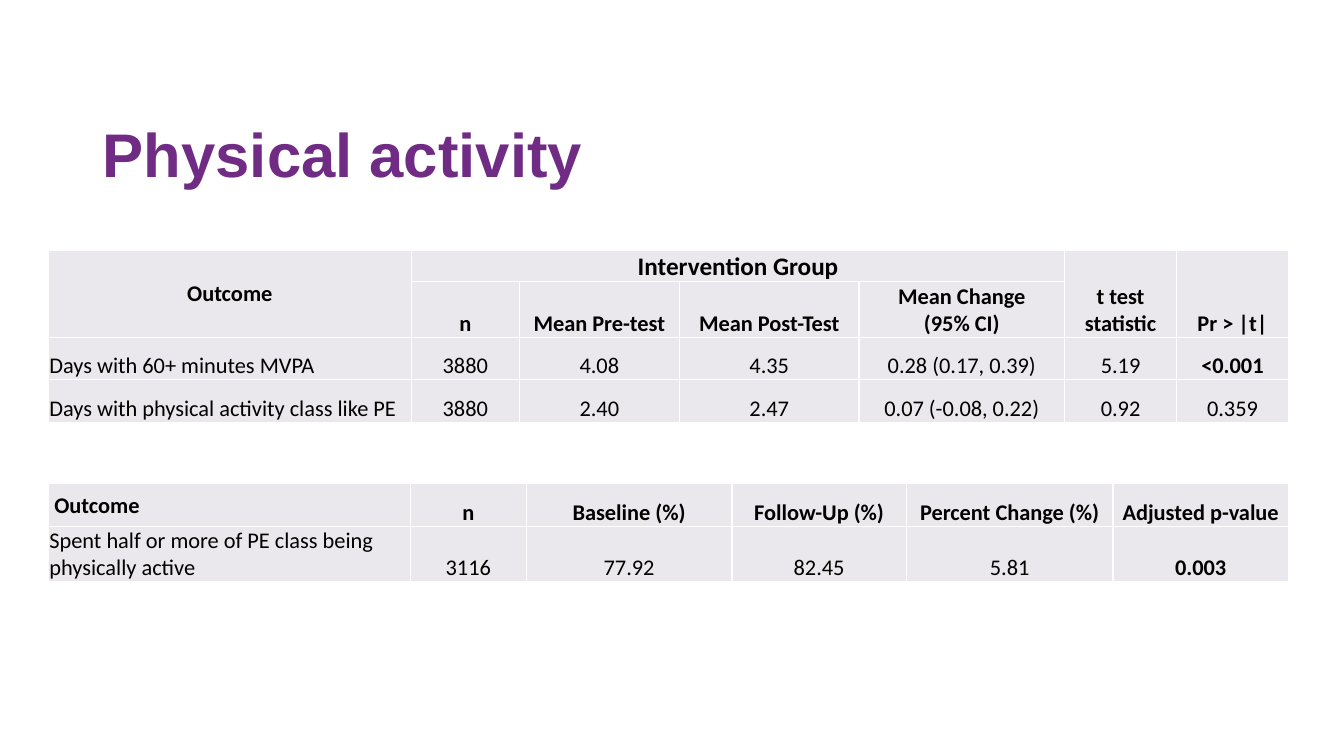
import dataclasses

import lxml.etree
import pptx
import pptx.dml.color
import pptx.enum.text
import pptx.oxml.ns
import pptx.util

Inches = pptx.util.Inches
Pt = pptx.util.Pt
Align = pptx.enum.text.PP_ALIGN
Anchor = pptx.enum.text.MSO_ANCHOR


@dataclasses.dataclass(frozen=True)
class Theme:
    """Colours, fonts and type sizes of the slide."""
    title_colour: str = "702B84"
    text_colour: str = "000000"
    cell_fill: str = "EBE8ED"
    border: str = "FFFFFF"
    title_font: str = "Arial"
    table_font: str = "Calibri"
    title_size: int = 44
    group_size: int = 18
    body_size: int = 16


THEME = Theme()
TABLES_LEFT = 0.48

MEANS_COLUMNS = [3.6, 1.07, 1.59, 1.78, 2.04, 1.11, 1.11]
MEANS_HEIGHTS = [0.31, 0.55, 0.42, 0.42]
MEANS_ROWS = [
    ["Outcome", "Intervention Group", "", "", "", "t test statistic", "Pr > |t|"],
    ["", "n", "Mean Pre-test", "Mean Post-Test", "Mean Change\n(95% CI)", "", ""],
    ["Days with 60+ minutes MVPA", "3880", "4.08", "4.35", "0.28 (0.17, 0.39)", "5.19", "<0.001"],
    ["Days with physical activity class like PE", "3880", "2.40", "2.47", "0.07 (-0.08, 0.22)", "0.92", "0.359"],
]
MEANS_MERGES = [((0, 0), (1, 0)), ((0, 1), (0, 4)), ((0, 5), (1, 5)), ((0, 6), (1, 6))]

PERCENT_COLUMNS = [3.59, 1.15, 2.04, 1.73, 2.05, 1.74]
PERCENT_HEIGHTS = [0.42, 0.54]
PERCENT_ROWS = [
    ["Outcome", "n", "Baseline (%)", "Follow-Up (%)", "Percent Change (%)", "Adjusted p-value"],
    ["Spent half or more of PE class being physically active", "3116", "77.92", "82.45", "5.81", "0.003"],
]
SIGNIFICANT = {"<0.001", "0.003"}


def rgb(colour):
    """Turn a hex string into a colour."""
    return pptx.dml.color.RGBColor.from_string(colour)


def style_font(font, name, size, colour, bold):
    """Apply typeface, size, colour and weight."""
    font.name, font.size, font.bold = name, Pt(size), bold
    font.color.rgb = rgb(colour)


def add_title(slide, wording):
    """Place and format the slide title."""
    title = slide.shapes.title
    title.left, title.top = Inches(0.92), Inches(0.84)
    title.width, title.height = Inches(11.5), Inches(1.45)
    title.text_frame.text = wording
    title.text_frame.vertical_anchor = Anchor.MIDDLE
    heading = title.text_frame.paragraphs[0]
    heading.alignment, heading.line_spacing = Align.LEFT, 0.9
    style_font(heading.runs[0].font, THEME.title_font, THEME.title_size, THEME.title_colour, True)


def add_borders(cell):
    """Draw a thin line on each side of a cell."""
    properties = cell._tc.get_or_add_tcPr()
    qn = pptx.oxml.ns.qn
    for position, side in enumerate(("lnL", "lnR", "lnT", "lnB")):
        line = lxml.etree.Element(qn(f"a:{side}"), w=str(Pt(1)))
        solid = lxml.etree.SubElement(line, qn("a:solidFill"))
        lxml.etree.SubElement(solid, qn("a:srgbClr"), val=THEME.border)
        properties.insert(position, line)


def format_cell(cell, wording, alignment, anchor, size, bold):
    """Fill one cell with its wording and look."""
    cell.fill.solid()
    cell.fill.fore_color.rgb = rgb(THEME.cell_fill)
    cell.margin_left = cell.margin_right = cell.margin_top = Inches(0.01)
    cell.margin_bottom = 0
    cell.vertical_anchor = anchor
    paragraph = cell.text_frame.paragraphs[0]
    paragraph.text = wording
    paragraph.alignment = alignment
    style_font(paragraph.font, THEME.table_font, size, THEME.text_colour, bold)
    for run in paragraph.runs:
        style_font(run.font, THEME.table_font, size, THEME.text_colour, bold)
    add_borders(cell)


def add_results(slide, top, widths, heights, rows, header_rows, merges=()):
    """Add a table of outcomes and return it."""
    results = slide.shapes.add_table(
        len(rows), len(widths), Inches(TABLES_LEFT), Inches(top),
        Inches(sum(widths)), Inches(sum(heights))).table
    results.first_row = results.horz_banding = False
    for column, width in zip(results.columns, widths):
        column.width = Inches(width)
    for row, height in zip(results.rows, heights):
        row.height = Inches(height)
    for first, last in merges:
        results.cell(*first).merge(results.cell(*last))
    for r, row in enumerate(rows):
        for c, wording in enumerate(row):
            is_header = r < header_rows
            alignment = Align.LEFT if c == 0 and not is_header else Align.CENTER
            anchor = Anchor.MIDDLE if c == 0 and is_header else Anchor.BOTTOM
            size = THEME.group_size if wording == "Intervention Group" else THEME.body_size
            format_cell(results.cell(r, c), wording, alignment, anchor, size,
                        is_header or wording in SIGNIFICANT)
    return results


def main():
    """Build and save the slide."""
    deck = pptx.Presentation()
    deck.slide_width, deck.slide_height = Inches(13.33), Inches(7.5)
    slide = deck.slides.add_slide(deck.slide_layouts.get_by_name("Title Only"))
    add_title(slide, "Physical activity")
    add_results(slide, 2.48, MEANS_COLUMNS, MEANS_HEIGHTS, MEANS_ROWS, 2, MEANS_MERGES)
    percentages = add_results(slide, 4.8, PERCENT_COLUMNS, PERCENT_HEIGHTS, PERCENT_ROWS, 1)
    outcome_header = percentages.cell(0, 0)
    outcome_header.margin_left = Inches(0.06)
    outcome_header.text_frame.paragraphs[0].alignment = Align.LEFT
    deck.save("out.pptx")


if __name__ == "__main__":
    main()
